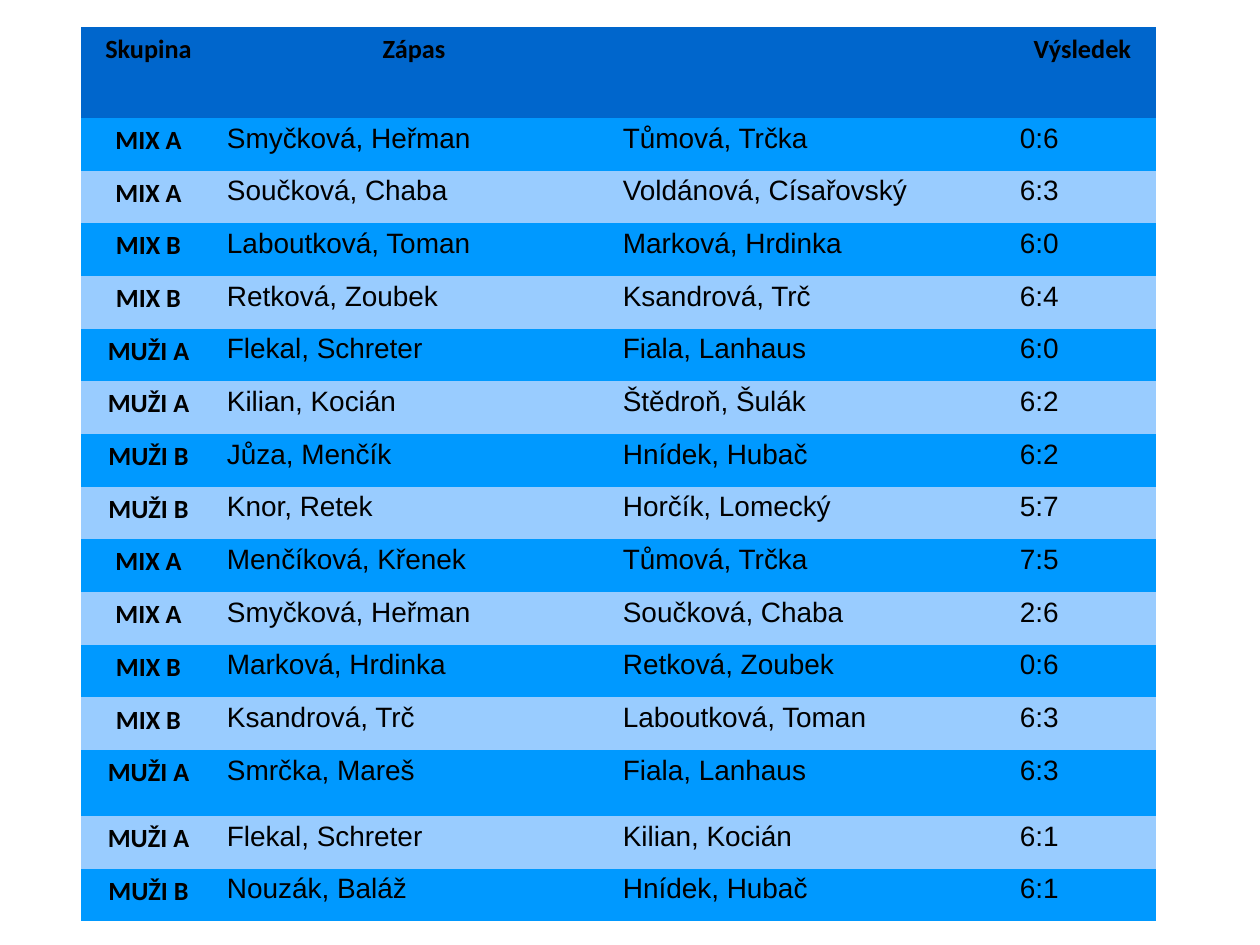
from lxml.etree import SubElement
from pptx import Presentation
from pptx.dml.color import RGBColor
from pptx.enum.text import PP_ALIGN
from pptx.oxml.ns import qn
from pptx.util import Pt

PX = 914400 / 126
COLORS = {"header": "0066CC", "odd": "0099FF", "even": "99CCFF", "text": "000000", "border": "FFFFFF"}
COLUMN_WIDTHS = [135, 396, 397, 147]
HEADER_HEIGHT = 91
TALL_ROW, TALL_HEIGHT = 13, 66
REGULAR_ROWS_HEIGHT = 738

ROWS = [
    ("Skupina", "Zápas", "", "Výsledek"),
    ("MIX A", "Smyčková, Heřman", "Tůmová, Trčka", "0:6"),
    ("MIX A", "Součková, Chaba", "Voldánová, Císařovský", "6:3"),
    ("MIX B", "Laboutková, Toman", "Marková, Hrdinka", "6:0"),
    ("MIX B", "Retková, Zoubek", "Ksandrová, Trč", "6:4"),
    ("MUŽI A", "Flekal, Schreter", "Fiala, Lanhaus", "6:0"),
    ("MUŽI A", "Kilian, Kocián", "Štědroň, Šulák", "6:2"),
    ("MUŽI B", "Jůza, Menčík", "Hnídek, Hubač", "6:2"),
    ("MUŽI B", "Knor, Retek", "Horčík, Lomecký", "5:7"),
    ("MIX A", "Menčíková, Křenek", "Tůmová, Trčka", "7:5"),
    ("MIX A", "Smyčková, Heřman", "Součková, Chaba", "2:6"),
    ("MIX B", "Marková, Hrdinka", "Retková, Zoubek", "0:6"),
    ("MIX B", "Ksandrová, Trč", "Laboutková, Toman", "6:3"),
    ("MUŽI A", "Smrčka, Mareš", "Fiala, Lanhaus", "6:3"),
    ("MUŽI A", "Flekal, Schreter", "Kilian, Kocián", "6:1"),
    ("MUŽI B", "Nouzák, Baláž", "Hnídek, Hubač", "6:1"),
]


def px(length):
    return round(length * PX)


def add_borders(cell):
    properties = cell._tc.get_or_add_tcPr()
    for position, side in enumerate(("a:lnL", "a:lnR", "a:lnT", "a:lnB")):
        line = SubElement(properties, qn(side), w=str(Pt(0.03)))
        fill = SubElement(line, qn("a:solidFill"))
        SubElement(fill, qn("a:srgbClr"), val=COLORS["border"])
        properties.insert(position, line)


presentation = Presentation()
presentation.slide_width = px(1260)
presentation.slide_height = px(945)
slide = presentation.slides.add_slide(presentation.slide_layouts[6])

table_height = HEADER_HEIGHT + TALL_HEIGHT + REGULAR_ROWS_HEIGHT
table = slide.shapes.add_table(
    len(ROWS), len(COLUMN_WIDTHS), px(81), px(27), px(sum(COLUMN_WIDTHS)), px(table_height)
).table
table.horz_banding = False
table.first_row = False

for column, width in zip(table.columns, COLUMN_WIDTHS):
    column.width = px(width)

for row_index, values in enumerate(ROWS):
    if row_index == 0:
        row_height, fill_name = HEADER_HEIGHT, "header"
    else:
        row_height = REGULAR_ROWS_HEIGHT / (len(ROWS) - 2)
        fill_name = "odd" if row_index % 2 else "even"
    if row_index == TALL_ROW:
        row_height = TALL_HEIGHT
    table.rows[row_index].height = px(row_height)

    for column_index, value in enumerate(values):
        cell = table.cell(row_index, column_index)
        cell.fill.solid()
        cell.fill.fore_color.rgb = RGBColor.from_string(COLORS[fill_name])
        add_borders(cell)
        if not value:
            continue
        is_label = row_index == 0 or column_index == 0
        cell.margin_left = cell.margin_right = px(11)
        cell.margin_top = px(6 if is_label else 7)
        cell.margin_bottom = px(6)
        cell.text_frame.text = value
        paragraph = cell.text_frame.paragraphs[0]
        paragraph.alignment = PP_ALIGN.CENTER if is_label else PP_ALIGN.LEFT
        paragraph.line_spacing = 1.02 if is_label else 0.93
        font = paragraph.runs[0].font
        font.name = "Calibri" if is_label else "Arial"
        font.size = Pt(15 if is_label else 16)
        font.bold = is_label
        font.color.rgb = RGBColor.from_string(COLORS["text"])

presentation.save("out.pptx")
